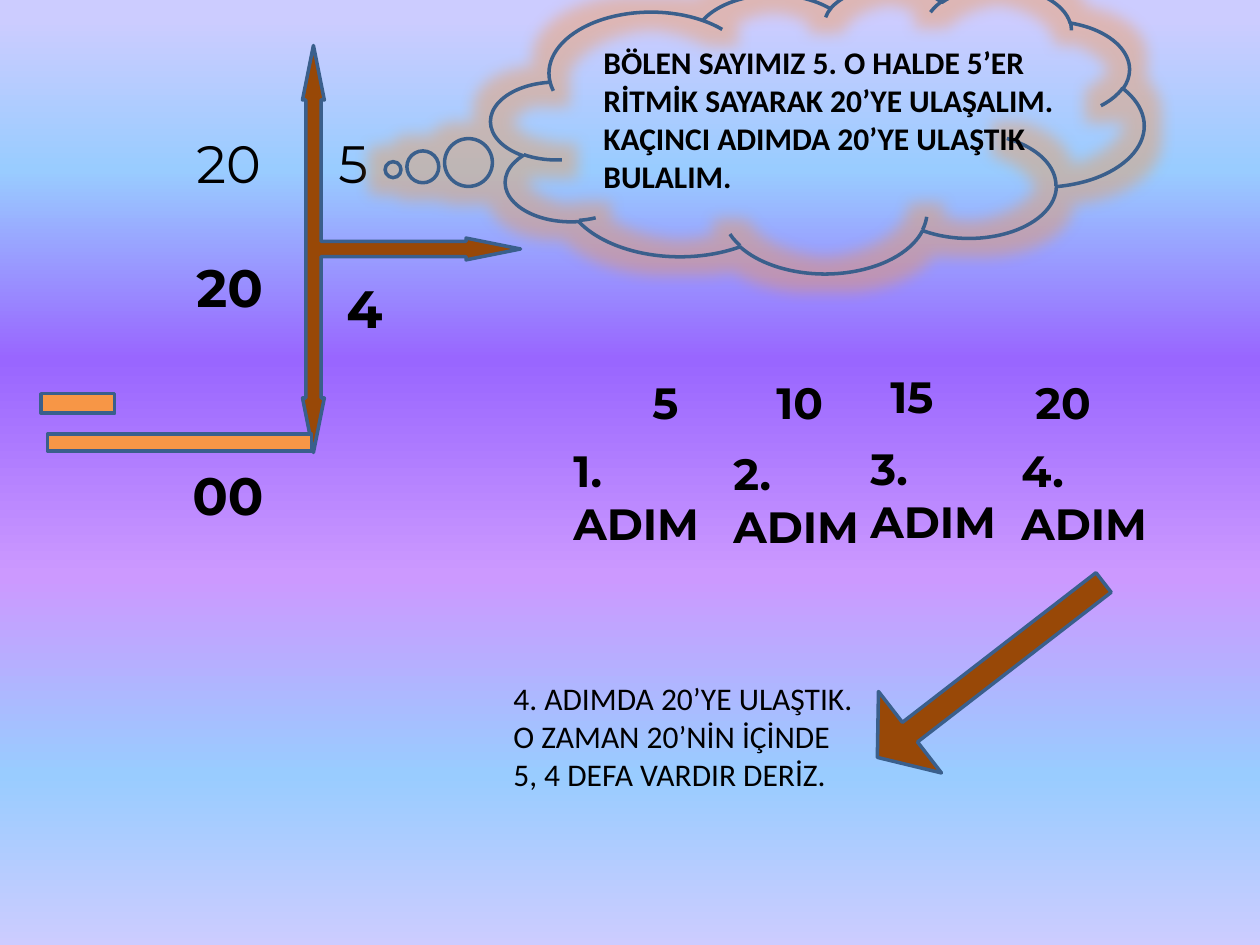
"""Build a slide that explains 20 ÷ 5 by counting in fives."""
from dataclasses import dataclass

from lxml import etree
from pptx import Presentation
from pptx.dml.color import RGBColor
from pptx.enum.shapes import MSO_SHAPE
from pptx.oxml.ns import qn
from pptx.util import Emu, Pt

DIVISION_ARROW = MSO_SHAPE.LEFT_RIGHT_UP_ARROW
DOWN_ARROW = MSO_SHAPE.DOWN_ARROW
CLOUD = MSO_SHAPE.CLOUD_CALLOUT
MINUS = MSO_SHAPE.MATH_MINUS
EMU_PER_PX = 914400 / 126


@dataclass(frozen=True)
class Theme:
    """Colours, fonts and type sizes of the slide."""
    brown: str = "984807"
    orange: str = "F79646"
    outline: str = "3A5F8C"
    text: str = "000000"
    background: tuple = (
        (0, "CCCCFF"), (2, "CCCCFF"), (18, "99CCFF"), (38, "9966FF"),
        (61, "CC99FF"), (82, "99CCFF"), (100, "CCCCFF"),
    )
    number_font: str = "Montserrat"
    body_font: str = "Calibri"
    number_size: int = 30
    step_size: int = 25
    body_size: int = 18
    line_width: int = 2
    glow_radius: int = 18


def px(length):
    return Emu(round(length * EMU_PER_PX))


def add_color(parent, color):
    return etree.SubElement(parent, qn("a:srgbClr"), val=color)


class SlideBuilder:
    def __init__(self, slide, theme):
        self.slide = slide
        self.theme = theme

    def background(self):
        fill = self.slide.background.fill
        fill.gradient()
        fill.gradient_angle = 270
        stops = self.slide.element.find(".//" + qn("a:gsLst"))
        for stop in list(stops):
            stops.remove(stop)
        for percent, color in self.theme.background:
            stop = etree.SubElement(stops, qn("a:gs"), pos=str(percent * 1000))
            add_color(stop, color)

    def text(self, box, words, size, bold=True, font=None):
        frame = self.slide.shapes.add_textbox(*map(px, box)).text_frame
        frame.word_wrap = True
        paragraph = frame.paragraphs[0]
        paragraph.text = words
        paragraph.font.name = font or self.theme.number_font
        paragraph.font.size = Pt(size)
        paragraph.font.bold = bold
        paragraph.font.color.rgb = RGBColor.from_string(self.theme.text)

    def shape(self, kind, box, fill=None, rotation=0, adjustments=()):
        shape = self.slide.shapes.add_shape(kind, *map(px, box))
        shape.shadow.inherit = False
        shape.rotation = rotation
        for index, value in enumerate(adjustments):
            shape.adjustments[index] = value
        if fill:
            shape.fill.solid()
            shape.fill.fore_color.rgb = RGBColor.from_string(fill)
        else:
            shape.fill.background()
        shape.line.color.rgb = RGBColor.from_string(self.theme.outline)
        shape.line.width = Pt(self.theme.line_width)
        return shape

    def glowing_cloud(self, box, adjustments):
        cloud = self.shape(CLOUD, box, adjustments=adjustments)
        effects = cloud.element.spPr.find(qn("a:effectLst"))
        radius = str(Pt(self.theme.glow_radius))
        glow = etree.SubElement(effects, qn("a:glow"), rad=radius)
        color = add_color(glow, self.theme.orange)
        etree.SubElement(color, qn("a:alpha"), val="40000")


def main():
    theme = Theme()
    presentation = Presentation()
    presentation.slide_width = px(1260)
    presentation.slide_height = px(945)
    slide = presentation.slides.add_slide(presentation.slide_layouts[6])
    builder = SlideBuilder(slide, theme)
    builder.background()

    builder.shape(DIVISION_ARROW, (208, 140, 407, 218), theme.brown, 90,
                  (0.07, 0.05, 0.25))
    for left, words in ((184, "20"), (326, "5")):
        builder.text((left, 125, 118, 77), words, theme.number_size, False)

    builder.glowing_cloud((491, -14, 653, 287), (-0.65, 0.14))
    builder.text(
        (591, 37, 522, 165),
        "BÖLEN SAYIMIZ 5. O HALDE 5’ER RİTMİK SAYARAK 20’YE ULAŞALIM. "
        "KAÇINCI ADIMDA 20’YE ULAŞTIK BULALIM.",
        theme.body_size, font=theme.body_font)

    count_places = ((640, 370), (764, 370), (878, 364), (1023, 370))
    step_places = ((561, 438), (721, 441), (858, 436), (1009, 438))
    places = zip(count_places, step_places)
    for step, (count_place, step_place) in enumerate(places, 1):
        builder.text((*count_place, 89, 66), str(5 * step), theme.step_size)
        builder.text((*step_place, 159, 118), f"{step}. ADIM", theme.step_size)

    builder.shape(DOWN_ARROW, (939, 527, 103, 286), theme.brown, 52.3,
                  (0.24, 0.4))
    builder.text(
        (501, 673, 365, 127),
        "4. ADIMDA 20’YE ULAŞTIK. O ZAMAN 20’NİN İÇİNDE 5, 4 DEFA VARDIR DERİZ.",
        theme.body_size, False, theme.body_font)

    for box in ((0, 407, 359, 71), (28, 362, 100, 83)):
        builder.shape(MINUS, box, theme.orange)
    for left, top, words in ((334, 270, "4"), (184, 249, "20"), (180, 457, "00")):
        builder.text((left, top, 103, 77), words, theme.number_size)

    presentation.save("out.pptx")


if __name__ == "__main__":
    main()
